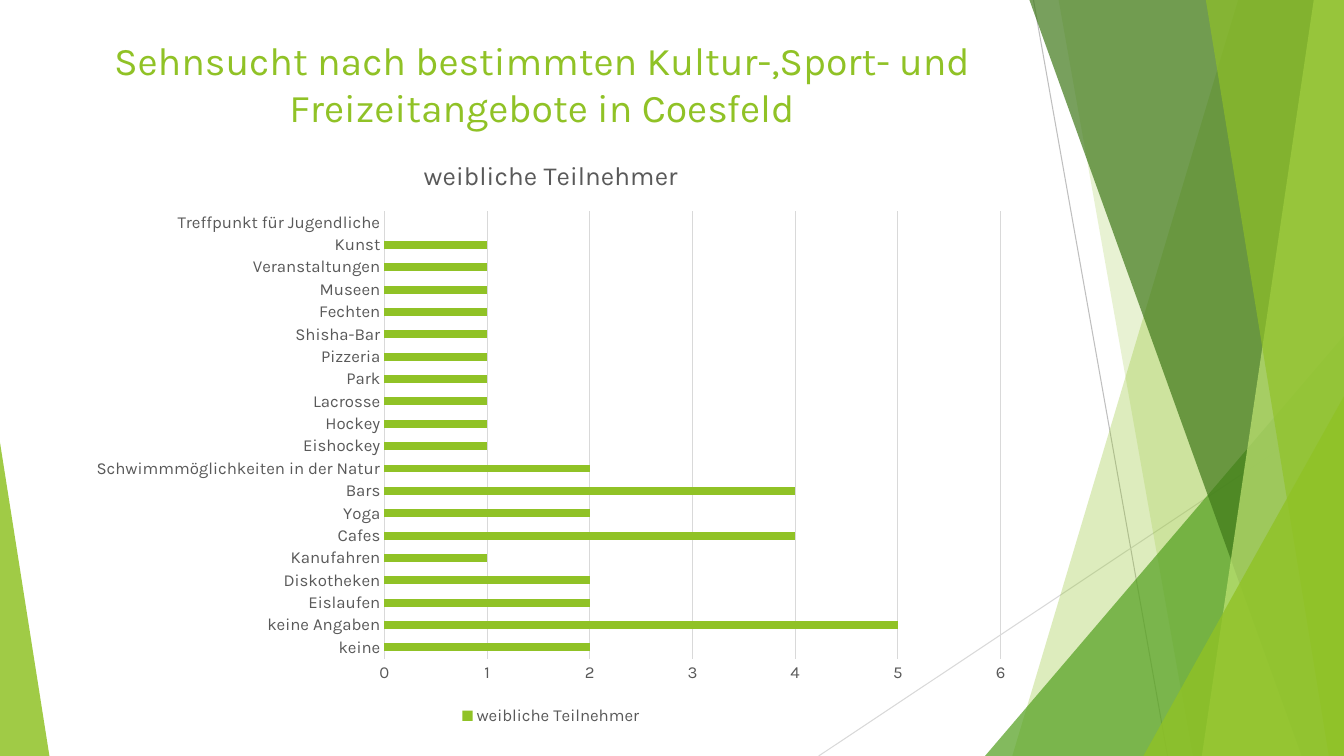
import pptx
import pptx.chart.data
import pptx.dml.color
import pptx.enum.chart
import pptx.enum.shapes
import pptx.enum.text
import pptx.oxml.ns
import pptx.util
from dataclasses import dataclass
from lxml import etree

Inches = pptx.util.Inches
Pt = pptx.util.Pt


@dataclass
class Theme:
    font: str = "Karla"
    green: str = "90C226"
    leaf: str = "54A021"
    dark: str = "3F7819"
    light: str = "C0E474"
    text: str = "595959"
    grid: str = "D9D9D9"
    rule: str = "BFBFBF"
    head: float = 28
    sub: float = 18.6
    label: float = 12
    thin: float = 0.75


def rgb(code):
    return pptx.dml.color.RGBColor.from_string(code)


class Deck:
    """Holds the theme and the current slide."""

    def __init__(self, theme, wide, high):
        self.theme = theme
        self.prs = pptx.Presentation()
        self.prs.slide_width, self.prs.slide_height = Inches(wide), Inches(high)
        self.slide = self.prs.slides.add_slide(self.prs.slide_layouts[5])
        self.shapes = self.slide.shapes

    def style(self, font, size, color):
        font.name, font.size, font.bold = self.theme.font, Pt(size), False
        font.color.rgb = rgb(color)

    def stroke(self, line, color):
        line.color.rgb = rgb(color)
        line.width = Pt(self.theme.thin)

    def paint(self, shape, color, alpha):
        """Fill without outline; alpha is opacity in percent."""
        shape.shadow.inherit = False
        shape.line.fill.background()
        shape.fill.solid()
        shape.fill.fore_color.rgb = rgb(color)
        tone = shape.fill._xPr.find(".//" + pptx.oxml.ns.qn("a:srgbClr"))
        etree.SubElement(tone, pptx.oxml.ns.qn("a:alpha"), val=str(alpha * 1000))

    def title(self, text, *box):
        head = self.shapes.title
        head.left, head.top, head.width, head.height = map(Inches, box)
        frame = head.text_frame
        frame.text = text
        frame.word_wrap = True
        frame.auto_size = pptx.enum.text.MSO_AUTO_SIZE.SHAPE_TO_FIT_TEXT
        frame.vertical_anchor = pptx.enum.text.MSO_ANCHOR.MIDDLE
        para = frame.paragraphs[0]
        para.alignment = pptx.enum.text.PP_ALIGN.CENTER
        self.style(para.font, self.theme.head, self.theme.green)

    def line(self, color, *ends):
        kind = pptx.enum.shapes.MSO_CONNECTOR.STRAIGHT
        link = self.shapes.add_connector(kind, *map(Inches, ends))
        self.stroke(link.line, color)
        etree.SubElement(link._element.spPr, pptx.oxml.ns.qn("a:effectLst"))

    def shard(self, top, foot, color, alpha):
        """Band from the right edge to a slanted left side."""
        wide, high = self.prs.slide_width, self.prs.slide_height
        pen = self.shapes.build_freeform(Inches(top), 0)
        pen.add_line_segments([(wide, 0), (wide, high), (Inches(foot), high)])
        self.paint(pen.convert_to_shape(), color, alpha)

    def wedge(self, left, top, width, tip, color, alpha):
        """Triangle that stands on the bottom edge."""
        kind = pptx.enum.shapes.MSO_SHAPE.ISOSCELES_TRIANGLE
        high = self.prs.slide_height - Inches(top)
        shape = self.shapes.add_shape(kind, Inches(left), Inches(top), Inches(width), high)
        shape.adjustments[0] = tip
        self.paint(shape, color, alpha)

    def bars(self, name, rows, *box):
        theme, enum = self.theme, pptx.enum.chart
        data = pptx.chart.data.CategoryChartData(number_format="General")
        data.categories = [label for label, _ in rows]
        data.add_series(name, [count for _, count in rows])
        kind = enum.XL_CHART_TYPE.BAR_CLUSTERED
        chart = self.shapes.add_chart(kind, *map(Inches, box), data).chart
        self.style(chart.font, theme.label, theme.text)

        # Heading and legend
        chart.has_title = True
        frame = chart.chart_title.text_frame
        frame.text = name
        self.style(frame.paragraphs[0].font, theme.sub, theme.text)
        chart.has_legend = True
        chart.legend.position = enum.XL_LEGEND_POSITION.BOTTOM
        chart.legend.include_in_layout = False
        self.style(chart.legend.font, theme.label, theme.text)

        # Axes
        for axis in (chart.category_axis, chart.value_axis):
            axis.major_tick_mark = axis.minor_tick_mark = enum.XL_TICK_MARK.NONE
            self.style(axis.tick_labels.font, theme.label, theme.text)
        self.stroke(chart.category_axis.format.line, theme.grid)
        scale = chart.value_axis
        scale.minimum_scale, scale.maximum_scale, scale.major_unit = 0, 6, 1
        scale.format.line.fill.background()
        scale.has_major_gridlines = True
        self.stroke(scale.major_gridlines.format.line, theme.grid)

        # Bars
        plot = chart.plots[0]
        plot.gap_width = 182
        plot.vary_by_categories = False
        fill = plot.series[0].format.fill
        fill.solid()
        fill.fore_color.rgb = rgb(theme.green)


ROWS = [
    ("keine", 2), ("keine Angaben", 5), ("Eislaufen", 2), ("Diskotheken", 2),
    ("Kanufahren", 1), ("Cafes", 4), ("Yoga", 2), ("Bars", 4),
    ("Schwimmmöglichkeiten in der Natur", 2), ("Eishockey", 1), ("Hockey", 1),
    ("Lacrosse", 1), ("Park", 1), ("Pizzeria", 1), ("Shisha-Bar", 1),
    ("Fechten", 1), ("Museen", 1), ("Veranstaltungen", 1), ("Kunst", 1),
    ("Treffpunkt für Jugendliche", None),
]


def main():
    theme = Theme()
    deck = Deck(theme, 13.33, 7.5)

    # Backdrop, from back to front
    deck.line(theme.rule, 10.25, 0, 11.58, 7.5)
    deck.line(theme.grid, 13.33, 4.03, 8.12, 7.5)
    deck.shard(12.28, 10.04, theme.green, 30)
    deck.shard(10.5, 11.83, theme.green, 20)
    deck.wedge(9.77, 3.33, 3.56, 1, theme.leaf, 72)
    deck.shard(10.21, 12.91, theme.dark, 70)
    deck.shard(13.03, 11.92, theme.light, 70)
    deck.shard(11.96, 13.18, theme.green, 65)
    deck.wedge(11.34, 3.93, 1.99, 1, theme.green, 80)
    deck.wedge(0, 4.39, 0.49, 0, theme.green, 85)

    # Content
    deck.title("Sehnsucht nach bestimmten Kultur-,Sport- und "
               "Freizeitangebote in Coesfeld", 0, 0.31, 10.75, 1.04)
    deck.bars("weibliche Teilnehmer", ROWS, 0.77, 1.35, 9.39, 5.89)

    deck.prs.save("out.pptx")


if __name__ == "__main__":
    main()
